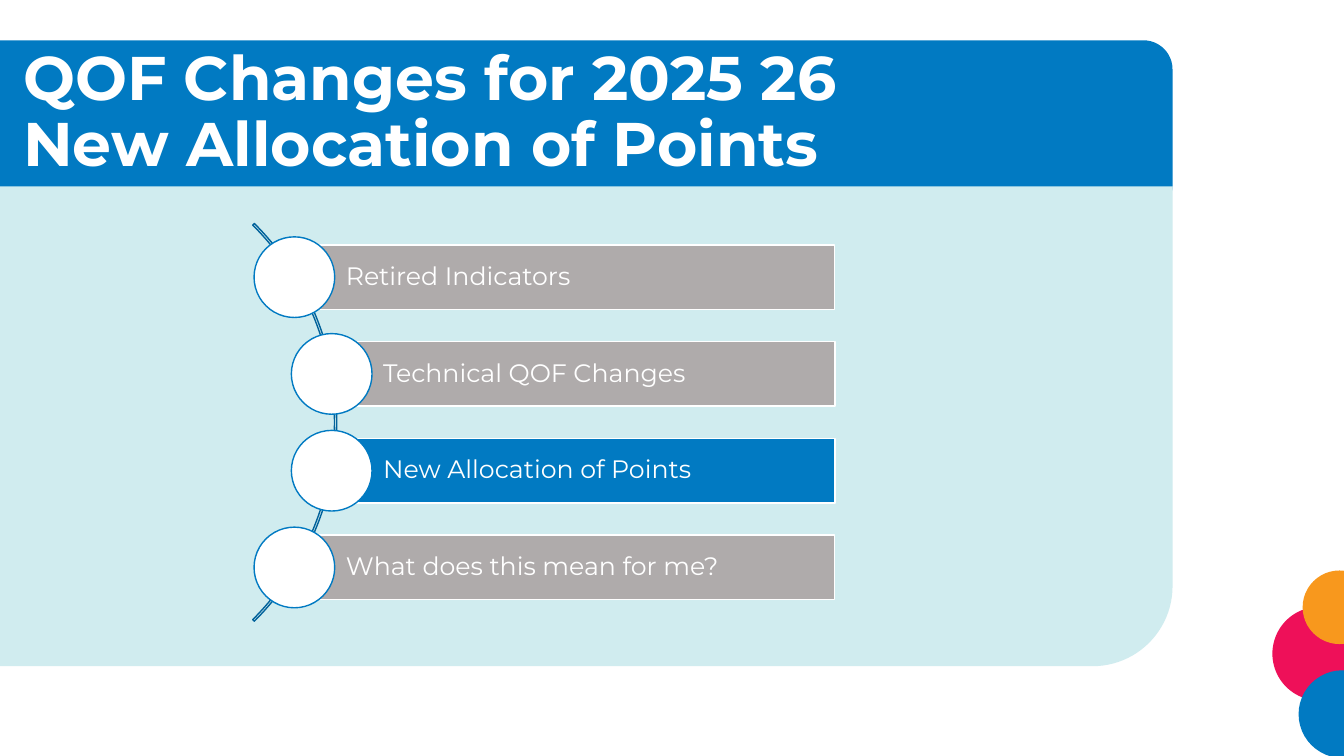
import pptx
import pptx.util
import pptx.dml.color
import pptx.enum.shapes
import pptx.enum.text

SHAPE = pptx.enum.shapes.MSO_SHAPE
FONT = "Montserrat"
BLUE, GREY, WHITE = "017AC2", "AFABAB", "FFFFFF"


def px(n):
    return pptx.util.Emu(n * 9144)


def rgb(color):
    return pptx.dml.color.RGBColor.from_string(color)


def add_shape(s, kind, x, y, w, h, fill=None, line=None):
    sp = s.shapes.add_shape(kind, px(x), px(y), px(w), px(h))
    sp.shadow.inherit = False
    if fill:
        sp.fill.solid()
        sp.fill.fore_color.rgb = rgb(fill)
    else:
        sp.fill.background()
    if line:
        sp.line.color.rgb = rgb(line)
        sp.line.width = pptx.util.Pt(1)
    else:
        sp.line.fill.background()
    return sp


def add_circle(s, x, y, d, fill, line=None):
    return add_shape(s, SHAPE.OVAL, x, y, d, d, fill, line)


def format_frame(tf):
    tf.word_wrap = True
    tf.auto_size = pptx.enum.text.MSO_AUTO_SIZE.NONE
    tf.vertical_anchor = pptx.enum.text.MSO_ANCHOR.MIDDLE
    p = tf.paragraphs[0]
    p.alignment = pptx.enum.text.PP_ALIGN.LEFT
    p.line_spacing = 0.9
    return p


def add_run(p, text, size, bold=False):
    r = p.add_run()
    r.text = text
    r.font.name = FONT
    r.font.size = pptx.util.Pt(size)
    r.font.bold = bold
    r.font.color.rgb = rgb(WHITE)


def add_panels(s):
    add_shape(s, SHAPE.ROUNDED_RECTANGLE, -40, 40, 1203, 173, BLUE)
    body = add_shape(s, SHAPE.ROUND_1_RECTANGLE, -11, 185, 1174, 476, "D0ECEF")
    body._element.spPr.xfrm.set("flipV", "1")


def add_title(s, lines):
    title = s.shapes.title
    title.left, title.top, title.width, title.height = px(13), px(40), px(1150), px(145)
    s.shapes._spTree.append(title._element)
    p = format_frame(title.text_frame)
    for i, line in enumerate(lines):
        if i:
            p.add_line_break()
        add_run(p, line, 44, True)


def add_arc(s):
    arc = add_shape(s, SHAPE.BLOCK_ARC, -224, 140, 558, 558, line="01629B")
    for i, value in enumerate((189, 27, 0.004)):
        arc.adjustments[i] = value


def add_step(s, x, y, text, fill):
    bar = add_shape(s, SHAPE.RECTANGLE, x, y, 828 - x, 64, fill, WHITE)
    tf = bar.text_frame
    tf.margin_left = px(51)
    tf.margin_right = tf.margin_top = tf.margin_bottom = px(5)
    add_run(format_frame(tf), text, 18)
    add_circle(s, x - 40, y - 8, 80, WHITE, BLUE)


def main():
    prs = pptx.Presentation()
    prs.slide_width, prs.slide_height = px(1333), px(750)
    s = prs.slides.add_slide(prs.slide_layouts[5])

    add_panels(s)
    for x, y, d, color in ((1262, 602, 93, "EE1059"),
                           (1288, 665, 87, BLUE),
                           (1292, 566, 73, "F8981D")):
        add_circle(s, x, y, d, color)
    add_title(s, ("QOF Changes for 2025 26", "New Allocation of Points"))

    add_arc(s)
    steps = (
        (292, "Retired Indicators", GREY),
        (329, "Technical QOF Changes", GREY),
        (329, "New Allocation of Points", BLUE),
        (292, "What does this mean for me?", GREY),
    )
    for i, (x, text, fill) in enumerate(steps):
        add_step(s, x, 243 + 96 * i, text, fill)

    prs.save("out.pptx")


if __name__ == "__main__":
    main()
